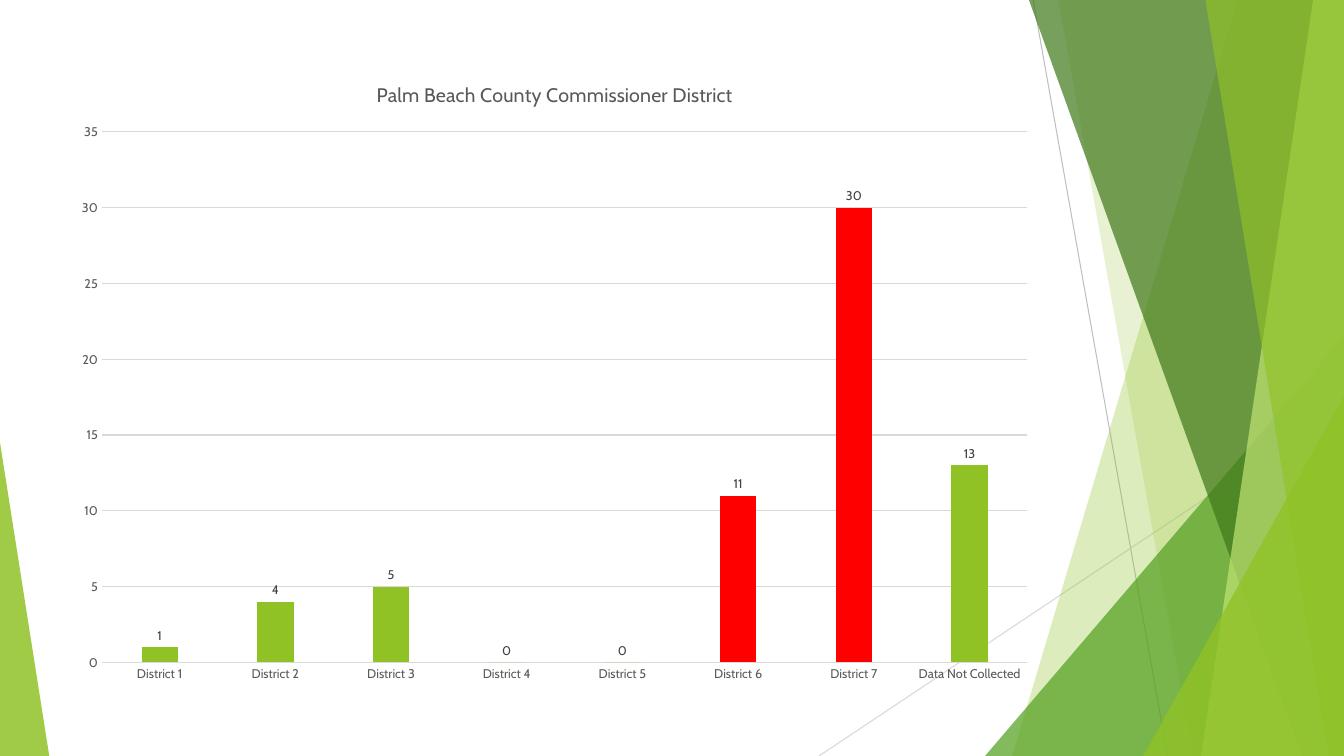
from lxml import etree
from pptx import Presentation
from pptx.chart.data import CategoryChartData
from pptx.dml.color import RGBColor
from pptx.enum.chart import XL_CHART_TYPE as Chart, XL_LABEL_POSITION as LabelPos
from pptx.enum.chart import XL_TICK_MARK as Tick
from pptx.enum.shapes import MSO_CONNECTOR as Conn, MSO_SHAPE as Shape
from pptx.oxml.ns import qn
from pptx.util import Pt

FONT = "Cabin"
LIME = RGBColor(0x90, 0xC2, 0x26)
GREEN = RGBColor(0x54, 0xA0, 0x21)
FOREST = RGBColor(0x3F, 0x78, 0x19)
PALE = RGBColor(0xC0, 0xE4, 0x74)
RED = RGBColor(0xFF, 0x00, 0x00)
BLACK = RGBColor(0x00, 0x00, 0x00)
TEXT = RGBColor(0x59, 0x59, 0x59)
LABEL = RGBColor(0x40, 0x40, 0x40)
GRID = RGBColor(0xD9, 0xD9, 0xD9)
GREY = RGBColor(0xBF, 0xBF, 0xBF)

# Facets from back to front; x values are distances from the right edge
FACETS = [
    ("band", 75.6, 237, LIME, 30),       # top x, bottom x
    ("band", 204, 108, LIME, 20),
    ("corner", 256.4, 300, GREEN, 72),   # width, height
    ("band", 224.8, 30.4, FOREST, 70),
    ("band", 21.6, 101.6, PALE, 70),
    ("band", 98.6, 11, LIME, 65),
    ("corner", 143.4, 257, LIME, 80),
]
DISTRICTS = [("District 1", 1), ("District 2", 4), ("District 3", 5),
             ("District 4", 0), ("District 5", 0), ("District 6", 11),
             ("District 7", 30), ("Data Not Collected", 13)]
HIGHLIGHTED = ("District 6", "District 7")


def paint(sp, color, opacity):
    sp.shadow.inherit = False
    sp.fill.solid()
    sp.fill.fore_color.rgb = color
    sp.line.fill.background()
    clr = sp.fill._xPr.find(qn("a:solidFill"))[0]
    etree.SubElement(clr, qn("a:alpha"), val=str(opacity * 1000))


def add_line(s, x1, y1, x2, y2, color):
    line = s.shapes.add_connector(Conn.STRAIGHT, Pt(x1), Pt(y1), Pt(x2), Pt(y2))
    line.line.color.rgb = color
    line.line.width = Pt(0.75)
    etree.SubElement(line._element.spPr, qn("a:effectLst"))


def add_triangle(s, x, y, w, h, apex, color, opacity):
    sp = s.shapes.add_shape(Shape.ISOSCELES_TRIANGLE, Pt(x), Pt(y), Pt(w), Pt(h))
    sp.adjustments[0] = apex
    paint(sp, color, opacity)


def add_facets(s, x, y, w, h):
    right, bottom = x + w, y + h
    # Thin crossing lines
    add_line(s, right - 222, y, right - 126, bottom, GREY)
    add_line(s, right, y + 290, right - 375, bottom, GRID)
    # Translucent panels on the right
    for kind, a, b, color, opacity in FACETS:
        if kind == "corner":
            add_triangle(s, right - a, bottom - b, a, b, 1, color, opacity)
        else:
            outline = s.shapes.build_freeform(right - a, y, scale=Pt(1))
            outline.add_line_segments(
                [(right, y), (right, bottom), (right - b, bottom)], close=True)
            paint(outline.convert_to_shape(), color, opacity)
    # Sliver on the left
    add_triangle(s, x, bottom - 224, 35.2, 224, 0, LIME, 85)


def set_font(font, size, color):
    font.name = FONT
    font.size = Pt(size)
    font.color.rgb = color


def set_plot_area(chart, **fractions):
    area = chart._chartSpace.chart.plotArea
    for old in area.findall(qn("c:layout")):
        area.remove(old)
    layout = etree.Element(qn("c:layout"))
    manual = etree.SubElement(layout, qn("c:manualLayout"))
    settings = {"layoutTarget": "inner", "xMode": "edge", "yMode": "edge", **fractions}
    for name, value in settings.items():
        etree.SubElement(manual, qn("c:" + name), val=str(value))
    area.insert(0, layout)


def add_district_chart(s, x, y, w, h):
    data = CategoryChartData()
    data.categories = [name for name, _ in DISTRICTS]
    data.add_series("Series 1", [count for _, count in DISTRICTS])
    chart = s.shapes.add_chart(Chart.COLUMN_CLUSTERED, Pt(x), Pt(y), Pt(w), Pt(h),
                               data).chart
    set_font(chart.font, 10, BLACK)
    chart.has_legend = False
    set_plot_area(chart, x=0.04, y=0.114, w=0.94, h=0.834)

    # Title
    chart.has_title = True
    chart.chart_title.include_in_layout = False
    r = chart.chart_title.text_frame.paragraphs[0].add_run()
    r.text = "Palm Beach County Commissioner District"
    set_font(r.font, 14, TEXT)
    r.font.bold = False

    # Axes
    cat, val = chart.category_axis, chart.value_axis
    for axis in (cat, val):
        axis.major_tick_mark = axis.minor_tick_mark = Tick.NONE
        set_font(axis.tick_labels.font, 9, TEXT)
    val.minimum_scale, val.maximum_scale, val.major_unit = 0, 35, 5
    val.format.line.fill.background()
    for line in (cat.format.line, val.major_gridlines.format.line):
        line.color.rgb = GRID
        line.width = Pt(0.75)

    # Columns and their labels
    plot = chart.plots[0]
    plot.gap_width, plot.overlap, plot.vary_by_categories = 219, -27, False
    series = plot.series[0]
    series.format.fill.solid()
    series.format.fill.fore_color.rgb = LIME
    for i, (name, _) in enumerate(DISTRICTS):
        if name in HIGHLIGHTED:
            fill = series.points[i].format.fill
            fill.solid()
            fill.fore_color.rgb = RED
    labels = series.data_labels
    labels.show_value = True
    labels.position = LabelPos.OUTSIDE_END
    set_font(labels.font, 9, LABEL)


def main():
    prs = Presentation()
    prs.slide_width, prs.slide_height = Pt(960), Pt(540)
    s = prs.slides.add_slide(prs.slide_layouts[6])
    add_facets(s, 0, 0, 960, 540)
    add_district_chart(s, 44.6, 42.5, 703.4, 454.3)
    prs.save("out.pptx")


if __name__ == "__main__":
    main()
